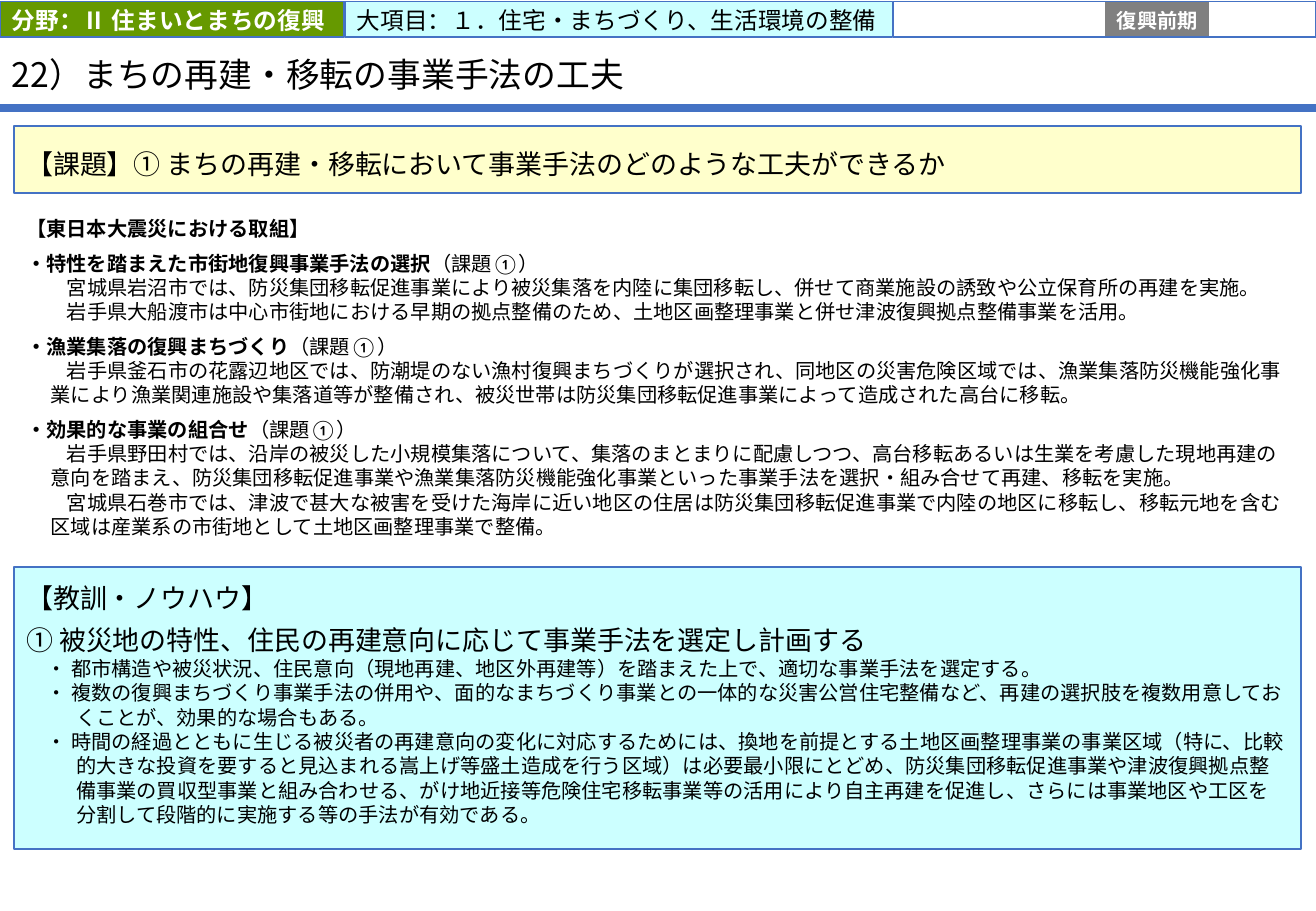
from lxml.etree import SubElement
from pptx import Presentation
from pptx.dml.color import RGBColor
from pptx.enum.shapes import MSO_CONNECTOR, MSO_SHAPE
from pptx.enum.text import MSO_ANCHOR, PP_ALIGN
from pptx.oxml.ns import qn
from pptx.util import Cm, Pt

LATIN, CJK = "Calibri", "Noto Sans CJK JP"
BLUE, GREEN, CYAN, CREAM = "4472C4", "669900", "CCFFFF", "FFFFCC"
GRAY, WHITE, BLACK = "808080", "FFFFFF", "000000"

EFFORTS = [
    ("特性を踏まえた市街地復興事業手法の選択", [
        "宮城県岩沼市では、防災集団移転促進事業により被災集落を内陸に集団移転し、併せて商業施設の誘致や公立保育所の再建を実施。",
        "岩手県大船渡市は中心市街地における早期の拠点整備のため、土地区画整理事業と併せ津波復興拠点整備事業を活用。"]),
    ("漁業集落の復興まちづくり", [
        "岩手県釜石市の花露辺地区では、防潮堤のない漁村復興まちづくりが選択され、同地区の災害危険区域では、漁業集落防災機能強化事業により漁業関連施設や集落道等が整備され、被災世帯は防災集団移転促進事業によって造成された高台に移転。"]),
    ("効果的な事業の組合せ", [
        "岩手県野田村では、沿岸の被災した小規模集落について、集落のまとまりに配慮しつつ、高台移転あるいは生業を考慮した現地再建の意向を踏まえ、防災集団移転促進事業や漁業集落防災機能強化事業といった事業手法を選択・組み合せて再建、移転を実施。",
        "宮城県石巻市では、津波で甚大な被害を受けた海岸に近い地区の住居は防災集団移転促進事業で内陸の地区に移転し、移転元地を含む区域は産業系の市街地として土地区画整理事業で整備。"]),
]
LESSONS = [
    "都市構造や被災状況、住民意向（現地再建、地区外再建等）を踏まえた上で、適切な事業手法を選定する。",
    "複数の復興まちづくり事業手法の併用や、面的なまちづくり事業との一体的な災害公営住宅整備など、再建の選択肢を複数用意しておくことが、効果的な場合もある。",
    "時間の経過とともに生じる被災者の再建意向の変化に対応するためには、換地を前提とする土地区画整理事業の事業区域（特に、比較的大きな投資を要すると見込まれる嵩上げ等盛土造成を行う区域）は必要最小限にとどめ、防災集団移転促進事業や津波復興拠点整備事業の買収型事業と組み合わせる、がけ地近接等危険住宅移転事業等の活用により自主再建を促進し、さらには事業地区や工区を分割して段階的に実施する等の手法が有効である。",
]


def rgb(color):
    return RGBColor.from_string(color)


def set_frame(tf, anchor, left=0.25, top=0.13, bottom=0.13):
    tf.word_wrap = True
    tf.vertical_anchor = anchor
    tf.margin_left = tf.margin_right = Cm(left)
    tf.margin_top, tf.margin_bottom = Cm(top), Cm(bottom)


def add_rect(slide, box, fill=None, line=None):
    sp = slide.shapes.add_shape(MSO_SHAPE.RECTANGLE, *map(Cm, box))
    sp.shadow.inherit = False
    if fill:
        sp.fill.solid()
        sp.fill.fore_color.rgb = rgb(fill)
    else:
        sp.fill.background()
    if line:
        sp.line.color.rgb = rgb(line)
        sp.line.width = Pt(1)
    else:
        sp.line.fill.background()
    return sp


def add_text(tf, text, size, name, color=BLACK, bold=False, before=0,
             margin=0, indent=0, align=PP_ALIGN.LEFT):
    """Fill the empty first paragraph, or append a new one."""
    p = tf.paragraphs[0] if not tf.text else tf.add_paragraph()
    p.add_run().text = text
    p.alignment = align
    p.space_before = Pt(before)
    p.font.size, p.font.name, p.font.bold = Pt(size), name, bold
    p.font.color.rgb = rgb(color)
    pPr = p._p.get_or_add_pPr()
    pPr.set("marL", str(Cm(margin)))
    pPr.set("indent", str(Cm(indent)))
    SubElement(pPr.find(qn("a:defRPr")), qn("a:ea")).set("typeface", name)
    return p


def add_header(slide, left, top, width, height):
    # Field and main item
    labels = [(0, 7.19, GREEN, "分野：Ⅱ 住まいとまちの復興", WHITE, True),
              (7.21, 11.51, CYAN, "大項目：１．住宅・まちづくり、生活環境の整備", BLACK, False)]
    for x, w, fill, text, color, bold in labels:
        tf = add_rect(slide, (left + x, top, w, height), fill, BLUE).text_frame
        set_frame(tf, MSO_ANCHOR.MIDDLE, top=0.05, bottom=0)
        add_text(tf, text, 14, LATIN, color, bold)

    # Four phases, the current one shaded
    start = 18.67
    step = (width - start) / 4
    for i, phase in enumerate(["", "", "復興前期", ""]):
        box = (left + start + i * step, top, step, height)
        sp = add_rect(slide, box, GRAY if phase else WHITE, WHITE)
        if phase:
            set_frame(sp.text_frame, MSO_ANCHOR.MIDDLE, left=0, top=0.05, bottom=0)
            add_text(sp.text_frame, phase, 12, LATIN, WHITE, True, align=PP_ALIGN.CENTER)
    add_rect(slide, (left + start, top, width - start, height), line=BLUE)


def add_title(slide, left, top, width, height, rule_width):
    title = slide.shapes.title
    title.left, title.top, title.width, title.height = map(Cm, (left, top, width, height))
    set_frame(title.text_frame, MSO_ANCHOR.MIDDLE, top=0.1, bottom=0)
    p = add_text(title.text_frame, "22）まちの再建・移転の事業手法の工夫", 20, CJK)
    p.line_spacing = 0.9

    # Rule under the title
    y = Cm(top + height - 0.02)
    rule = slide.shapes.add_connector(MSO_CONNECTOR.STRAIGHT, Cm(left), y, Cm(left + rule_width), y)
    rule.line.color.rgb = rgb(BLUE)
    rule.line.width = Pt(4.5)
    SubElement(rule._element.spPr, qn("a:effectLst"))


def add_issue(slide, *box):
    tf = add_rect(slide, box, CREAM, BLUE).text_frame
    set_frame(tf, MSO_ANCHOR.MIDDLE, top=0.3, bottom=0.3)
    p = add_text(tf, "【課題】① まちの再建・移転において事業手法のどのような工夫ができるか", 16, CJK)
    p.line_spacing = Pt(24)


def add_efforts(slide, *box):
    tf = add_rect(slide, box, WHITE).text_frame
    set_frame(tf, MSO_ANCHOR.MIDDLE)
    add_text(tf, "【東日本大震災における取組】", 12, LATIN, bold=True)
    for heading, examples in EFFORTS:
        p = add_text(tf, "・" + heading, 12, LATIN, bold=True, before=6)
        r = p.add_run()
        r.text = "（課題①）"
        r.font.bold = False
        for example in examples:
            add_text(tf, example, 12, CJK, margin=0.51, indent=0.34)


def add_lessons(slide, *box):
    tf = add_rect(slide, box, CYAN, BLUE).text_frame
    set_frame(tf, MSO_ANCHOR.TOP, top=0.3, bottom=0)
    add_text(tf, "【教訓・ノウハウ】", 16, CJK)
    add_text(tf, "① 被災地の特性、住民の再建意向に応じて事業手法を選定し計画する", 16, CJK, before=6)
    for lesson in LESSONS:
        add_text(tf, "・ " + lesson, 12, CJK, margin=1.04, indent=-0.62)


def main():
    prs = Presentation()
    prs.slide_width, prs.slide_height = Cm(27.51), Cm(19.05)
    slide = prs.slides.add_slide(prs.slide_layouts[5])
    add_title(slide, 0, 0.81, 24.08, 1.47, 27.51)
    add_header(slide, 0, 0.03, 27.51, 0.74)
    add_issue(slide, 0.3, 2.64, 26.9, 1.4)
    add_efforts(slide, 0.3, 4.29, 26.9, 7.21)
    add_lessons(slide, 0.3, 11.86, 26.9, 5.89)
    prs.save("out.pptx")


if __name__ == "__main__":
    main()
